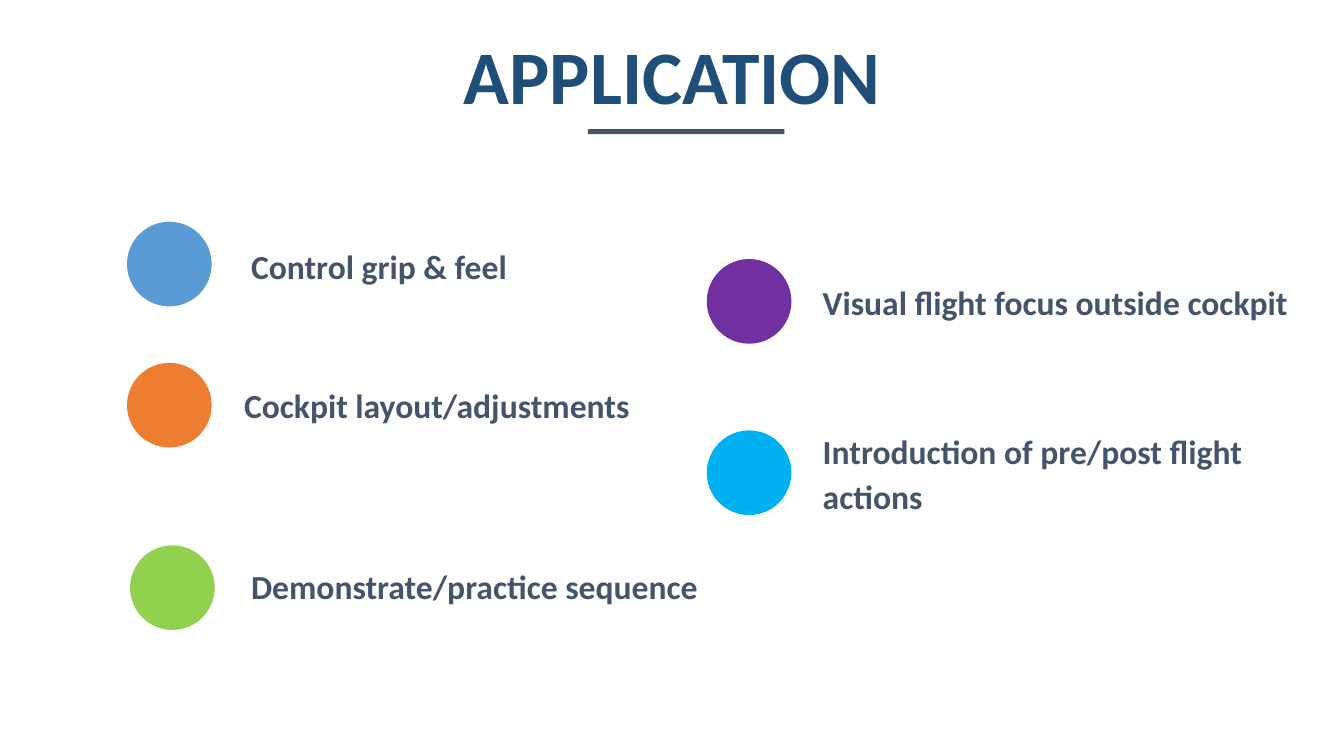
from pptx import Presentation
from pptx import util as u
from pptx.dml.color import RGBColor
from pptx.enum import shapes, text

TITLE = "APPLICATION"
POINTS = [
    ("Control grip & feel", "5B9BD5", (126, 220), (237, 234, 293, 57)),
    ("Cockpit layout/adjustments", "ED7D31", (126, 360), (230, 372, 409, 101)),
    ("Demonstrate/practice sequence", "92D050", (129, 541), (237, 551, 480, 101)),
    ("Visual flight focus outside cockpit", "7030A0", (701, 257), (804, 270, 497, 57)),
    ("Introduction of pre/post flight actions", "00B0F0", (701, 427), (804, 418, 467, 101)),
]
DOT = 84
SLATE, NAVY = "44546A", "1F4E79"
PX = 9144


def rgb(color):
    return RGBColor.from_string(color)


def add_filled(s, kind, box, color):
    sp = s.shapes.add_shape(kind, *(v * PX for v in box))
    sp.shadow.inherit = False
    sp.fill.solid()
    sp.fill.fore_color.rgb = rgb(color)
    sp.line.fill.background()


def add_text(s, words, box, size, color, inset, spacing=1.0, align=text.PP_ALIGN.LEFT):
    tf = s.shapes.add_textbox(*(v * PX for v in box)).text_frame
    tf.word_wrap = True
    tf.auto_size = text.MSO_AUTO_SIZE.SHAPE_TO_FIT_TEXT
    tf.margin_left = tf.margin_right = inset[0] * PX
    tf.margin_top = tf.margin_bottom = inset[1] * PX
    p = tf.paragraphs[0]
    p.text = words
    p.alignment = align
    p.line_spacing = spacing
    p.font.name = "Calibri"
    p.font.size = u.Pt(size)
    p.font.bold = True
    p.font.color.rgb = rgb(color)


def main():
    prs = Presentation()
    prs.slide_width, prs.slide_height = 1333 * PX, 750 * PX
    s = prs.slides.add_slide(prs.slide_layouts[6])
    add_text(s, TITLE, (94, 27, 1146, 96), 54, NAVY, (5, 2), align=text.PP_ALIGN.CENTER)
    add_filled(s, shapes.MSO_SHAPE.RECTANGLE, (583, 128, 195, 5), SLATE)
    for words, color, corner, box in POINTS:
        add_filled(s, shapes.MSO_SHAPE.OVAL, (*corner, DOT, DOT), color)
        add_text(s, words, box, 24, SLATE, (12, 6), spacing=1.1)
    prs.save("out.pptx")


if __name__ == "__main__":
    main()
